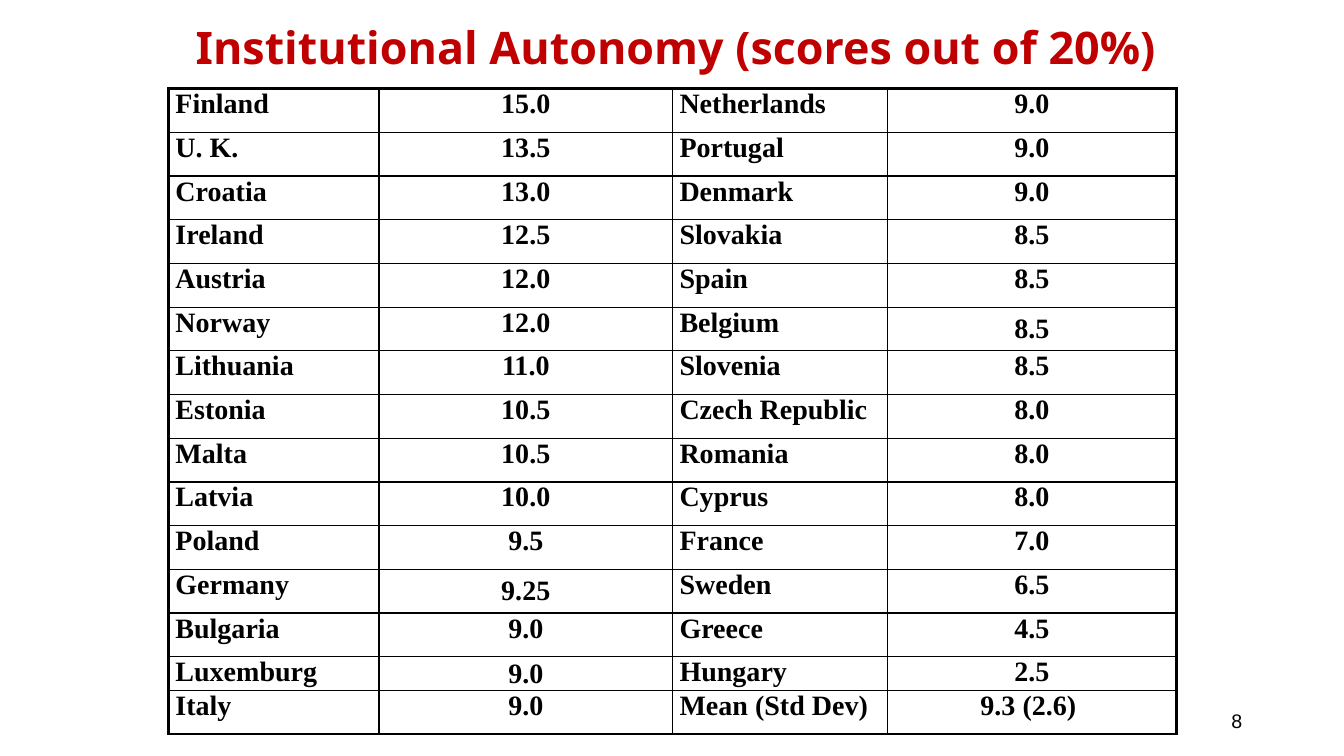
from lxml import etree
from pptx import Presentation
from pptx.dml.color import RGBColor
from pptx.enum.text import MSO_ANCHOR, PP_ALIGN
from pptx.oxml.ns import qn
from pptx.util import Inches, Pt

LEFT, CENTER, RIGHT = PP_ALIGN.LEFT, PP_ALIGN.CENTER, PP_ALIGN.RIGHT
TOP, MIDDLE = MSO_ANCHOR.TOP, MSO_ANCHOR.MIDDLE
BLACK, RED = "000000", "C00000"
THIN, THICK = 1, 2.25

SCORES = [
    ("Finland", "15.0", "Netherlands", "9.0"),
    ("U. K.", "13.5", "Portugal", "9.0"),
    ("Croatia", "13.0", "Denmark", "9.0"),
    ("Ireland", "12.5", "Slovakia", "8.5"),
    ("Austria", "12.0", "Spain", "8.5"),
    ("Norway", "12.0", "Belgium", "8.5"),
    ("Lithuania", "11.0", "Slovenia", "8.5"),
    ("Estonia", "10.5", "Czech Republic", "8.0"),
    ("Malta", "10.5", "Romania", "8.0"),
    ("Latvia", "10.0", "Cyprus", "8.0"),
    ("Poland", "9.5", "France", "7.0"),
    ("Germany", "9.25", "Sweden", "6.5"),
    ("Bulgaria", "9.0", "Greece", "4.5"),
    ("Luxemburg", "9.0", "Hungary", "2.5"),
    ("Italy", "9.0", "Mean (Std Dev)", "9.3 (2.6) "),
]
COL_WIDTHS = [2.09, 2.91, 2.13, 2.87]
SHORT_ROW, SHORT_HEIGHT = 13, 0.33
MIDDLE_CELLS = {(5, 3), (11, 1), (13, 1)}


def color(value):
    """Return the colour for a hex string."""
    return RGBColor.from_string(value)


def write(tf, text, size, font, fill=BLACK, bold=False, align=LEFT):
    """Write one formatted paragraph into a text frame."""
    p = tf.paragraphs[0]
    p.alignment = align
    r = p.add_run()
    r.text = text
    r.font.size = Pt(size)
    r.font.name = font
    r.font.bold = bold
    r.font.color.rgb = color(fill)


def add_text(s, box, text, margins=(0.1, 0.05), anchor=TOP, **fmt):
    """Add a wrapping text box with horizontal and vertical margins."""
    tf = s.shapes.add_textbox(*map(Inches, box)).text_frame
    tf.word_wrap = True
    tf.vertical_anchor = anchor
    tf.margin_left = tf.margin_right = Inches(margins[0])
    tf.margin_top = tf.margin_bottom = Inches(margins[1])
    write(tf, text, **fmt)


def set_borders(cell, widths):
    """Draw the left, right, top and bottom borders of a cell."""
    tc_pr = cell._tc.get_or_add_tcPr()
    for i, (side, width) in enumerate(zip("LRTB", widths)):
        ln = etree.Element(qn(f"a:ln{side}"), w=str(Pt(width)))
        fill = etree.SubElement(ln, qn("a:solidFill"))
        etree.SubElement(fill, qn("a:srgbClr"), val=BLACK)
        tc_pr.insert(i, ln)


def add_title(s, box):
    """Add the slide title."""
    add_text(s, box, "Institutional Autonomy (scores out of 20%)", margins=(0.2, 0.2),
             size=32, font="Noto Sans", fill=RED, bold=True, align=CENTER)


def add_scores(s, box):
    """Add the table of countries and their scores."""
    n_rows, n_cols = len(SCORES), len(COL_WIDTHS)
    table = s.shapes.add_table(n_rows, n_cols, *map(Inches, box)).table
    table.first_row = table.horz_banding = False
    for col, width in zip(table.columns, COL_WIDTHS):
        col.width = Inches(width)
    height = (box[3] - SHORT_HEIGHT) / (n_rows - 1)
    for i, values in enumerate(SCORES):
        table.rows[i].height = Inches(SHORT_HEIGHT if i == SHORT_ROW else height)
        for j, value in enumerate(values):
            cell = table.cell(i, j)
            cell.margin_left = cell.margin_right = Inches(0.07)
            cell.margin_top = cell.margin_bottom = 0
            cell.vertical_anchor = MIDDLE if (i, j) in MIDDLE_CELLS else TOP
            cell.fill.background()
            write(cell.text_frame, value, size=20, font="Times New Roman", bold=True,
                  align=CENTER if j % 2 else LEFT)
            outer = (j == 0, j == n_cols - 1, i == 0, i == n_rows - 1)
            set_borders(cell, [THICK if edge else THIN for edge in outer])


def add_page_number(s, box):
    """Add the slide number."""
    add_text(s, box, "8", anchor=MIDDLE, size=14, font="Arial", align=RIGHT)


def main():
    """Build and save the slide."""
    prs = Presentation()
    prs.slide_width, prs.slide_height = Inches(13.33), Inches(7.5)
    s = prs.slides.add_slide(prs.slide_layouts[6])
    add_title(s, (1.47, 0, 10.47, 0.94))
    add_scores(s, (1.67, 0.88, 10, 6.4))
    add_page_number(s, (9.42, 6.95, 3, 0.4))
    prs.save("out.pptx")


if __name__ == "__main__":
    main()
